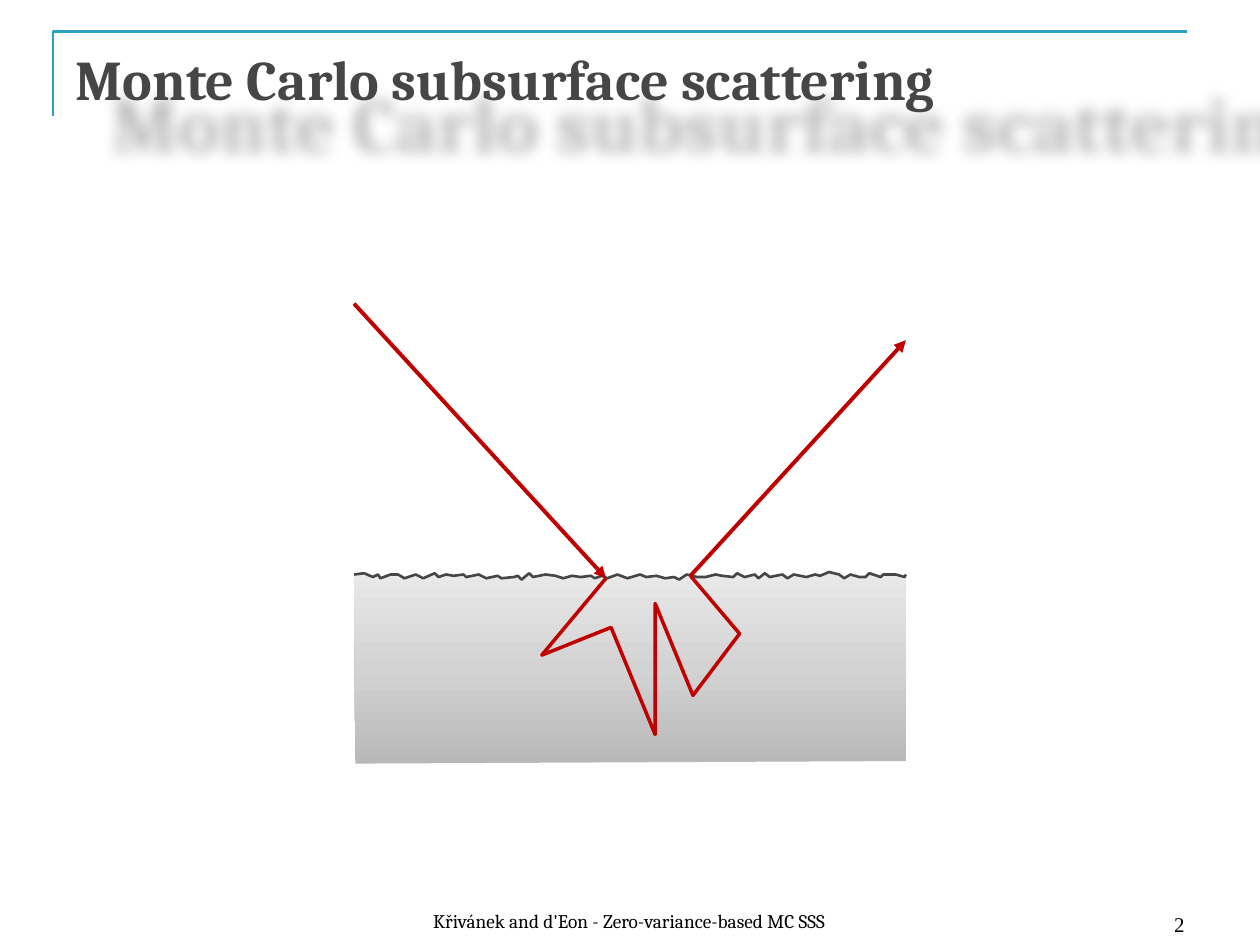
from copy import deepcopy
from lxml import etree
from pptx import Presentation
from pptx.dml.color import RGBColor as Rgb
from pptx.enum.shapes import MSO_CONNECTOR as Link
from pptx.enum.text import MSO_ANCHOR as Anchor, PP_ALIGN as Align
from pptx.oxml.ns import qn
from pptx.util import Pt

PX = 9144
HUES = {
    "frame": "2DA2BF", "title": "464646", "ray": "C00000", "text": "000000",
    "deep": "B8B8B8", "mid": "D3D3D3", "pale": "E9E9E9",
}
BUMPS = [
    (0, 2), (8, 1), (15, 4), (19, 2), (21, 5), (29, 2), (35, 2), (40, 5),
    (49, 2), (55, 5), (64, 1), (67, 4), (73, 2), (79, 3), (87, 2), (89, 4),
    (99, 2), (105, 5), (114, 3), (117, 5), (127, 4), (130, 3), (133, 6),
    (139, 1), (142, 4), (152, 2), (160, 3), (166, 5), (173, 3), (180, 4),
    (188, 3), (191, 5), (197, 3), (201, 5), (209, 2), (217, 5), (227, 2),
    (232, 4), (240, 3), (247, 5), (254, 4), (258, 6), (264, 2), (272, 4),
    (279, 4), (287, 2), (292, 3), (301, 4), (304, 1), (310, 4), (318, 2),
    (321, 5), (326, 1), (330, 4), (340, 2), (344, 5), (349, 2), (359, 4),
    (366, 2), (370, 3), (377, 0), (385, 2), (389, 5), (394, 2), (401, 4),
    (406, 4), (409, 1), (418, 4), (420, 2), (430, 2), (437, 4), (438, 2),
]
WALK = [(200, 5), (149, 66), (204, 44), (239, 129), (239, 25),
        (269, 98), (306, 49), (267, 3)]


def hue(name):
    return Rgb.from_string(HUES[name])


def path(shapes, box, spots, close=False):
    x, y = box[:2]
    pen = shapes.build_freeform(*spots[0], scale=PX)
    pen.add_line_segments(spots[1:], close=close)
    form = pen.convert_to_shape(x * PX, y * PX)
    form.shadow.inherit = False
    form.fill.background()
    form.line.fill.background()
    return form


def stroke(form, name, width):
    form.line.color.rgb = hue(name)
    form.line.width = Pt(width)


def ray(shapes, box, start, end):
    x, y = box[:2]
    ends = [(n + m) * PX for spot in (start, end) for n, m in zip(spot, (x, y))]
    link = shapes.add_connector(Link.STRAIGHT, *ends)
    stroke(link, "ray", 2.25)
    etree.SubElement(link.line._get_or_add_ln(), qn("a:tailEnd"), type="triangle")
    etree.SubElement(link._element.spPr, qn("a:effectLst"))


def label(slide, box, words, font, size, name, align, anchor, bold=False):
    form = slide.shapes.add_textbox(*[n * PX for n in box])
    frame = form.text_frame
    frame.word_wrap = True
    frame.vertical_anchor = anchor
    para = frame.paragraphs[0]
    para.alignment = align
    run = para.add_run()
    run.text = words
    run.font.name = font
    run.font.size = Pt(size)
    run.font.bold = bold
    run.font.color.rgb = hue(name)
    return form


def header(slide, box):
    x, y, wide, high = box
    frame = path(slide.shapes, box, [(0, 67), (0, 0), (wide, 0)])
    stroke(frame, "frame", 1.5)
    title = label(slide, (x + 8, y + 5, wide, high), "Monte Carlo subsurface scattering",
                  "Cambria", 32, "title", Align.LEFT, Anchor.TOP, True)
    glow = etree.SubElement(title._element.spPr, qn("a:effectLst"))
    cast = etree.SubElement(
        glow, qn("a:outerShdw"), blurRad=str(12 * PX), dist=str(33 * PX),
        dir="2400000", sx="140000", sy="140000", algn="tl", rotWithShape="0")
    tint = etree.SubElement(cast, qn("a:srgbClr"), val=HUES["text"])
    etree.SubElement(tint, qn("a:alpha"), val="28000")


def shade(form):
    fill = form.fill
    fill.gradient()
    fill.gradient_angle = 90
    stops = form._element.spPr.find(".//" + qn("a:gsLst"))
    stops.append(deepcopy(stops[-1]))
    for stop, place, name in zip(fill.gradient_stops, (0, 0.5, 1), ("deep", "mid", "pale")):
        stop.position = place
        stop.color.rgb = hue(name)


def scene(slide, box):
    shapes = slide.shapes.add_group_shape().shapes
    wide, high = box[2:]
    shade(path(shapes, box, BUMPS + [(wide, high - 2), (1, high)], True))
    stroke(path(shapes, box, BUMPS), "title", 1.5)
    stroke(path(shapes, box, WALK), "ray", 2)
    ray(shapes, box, (0, -213), WALK[0])
    ray(shapes, box, WALK[-1], (wide, -184))


def footer(slide, box):
    x, y, wide, high = box
    label(slide, (x, y, 693, high), "Křivánek and d'Eon - Zero-variance-based MC SSS",
          "Cambria", 11, "text", Align.CENTER, Anchor.BOTTOM)
    label(slide, (x + wide - 233, y + 3, 233, high), "2",
          "Times New Roman", 12, "text", Align.RIGHT, Anchor.BOTTOM)


def main():
    deck = Presentation()
    deck.slide_width, deck.slide_height = 1000 * PX, 750 * PX
    slide = deck.slides.add_slide(deck.slide_layouts[6])
    header(slide, (42, 25, 900, 125))
    scene(slide, (281, 454, 438, 152))
    footer(slide, (153, 695, 797, 50))
    deck.save("out.pptx")


if __name__ == "__main__":
    main()
